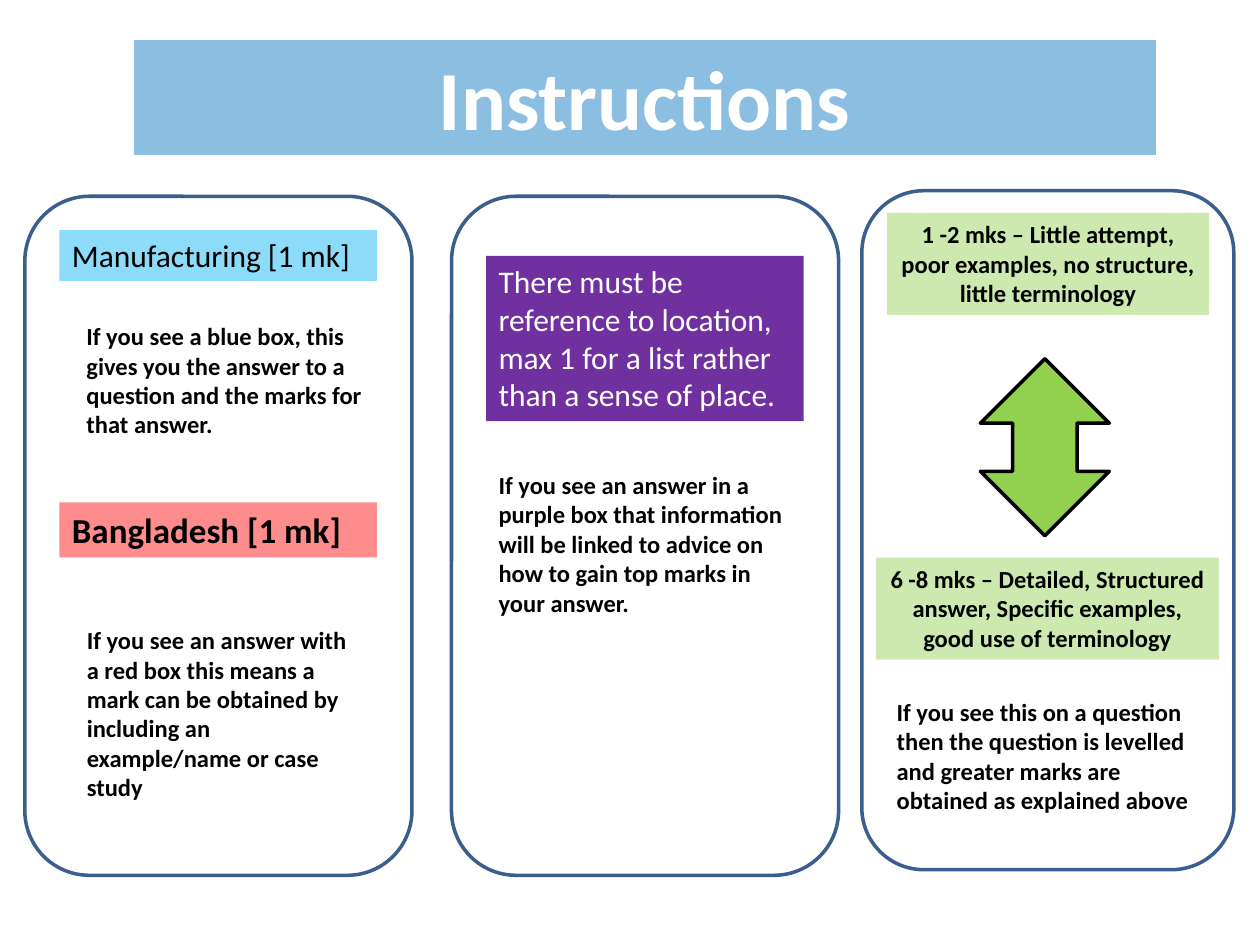
import pptx
import pptx.util
import pptx.dml.color
import pptx.enum.shapes
import pptx.enum.text
import pptx.oxml.ns
import lxml.etree

Pt = pptx.util.Pt
Shape = pptx.enum.shapes.MSO_SHAPE
Align = pptx.enum.text.PP_ALIGN

COLOURS = {
    "white": "FFFFFF",
    "black": "000000",
    "outline": "3A5F8C",
    "title": "0070C0",
    "answer": "00B0F0",
    "example": "FF0000",
    "advice": "7030A0",
    "level": "92D050",
}


class InstructionSlide:
    font = "Calibri"
    line_width = 2
    tint = 45

    def __init__(self, slide):
        self.slide = slide

    def colour(self, name):
        return pptx.dml.color.RGBColor.from_string(COLOURS[name])

    def shape(self, kind, place, fill, outline=None, opacity=100):
        shape = self.slide.shapes.add_shape(kind, *map(Pt, place))
        shape.shadow.inherit = False
        shape.fill.solid()
        shape.fill.fore_color.rgb = self.colour(fill)
        if opacity < 100:
            solid = shape.element.spPr.find(pptx.oxml.ns.qn("a:solidFill"))
            alpha = lxml.etree.SubElement(solid[0], pptx.oxml.ns.qn("a:alpha"))
            alpha.set("val", str(opacity * 1000))
        if outline:
            shape.line.color.rgb = self.colour(outline)
            shape.line.width = Pt(self.line_width)
        else:
            shape.line.fill.background()
        return shape

    def set_text(self, shape, text, size, bold, colour, align):
        frame = shape.text_frame
        frame.word_wrap = True
        frame.vertical_anchor = pptx.enum.text.MSO_ANCHOR.TOP
        paragraph = frame.paragraphs[0]
        paragraph.text = text
        paragraph.alignment = align
        paragraph.font.name = self.font
        paragraph.font.size = Pt(size)
        paragraph.font.bold = bold
        paragraph.font.color.rgb = self.colour(colour)

    def panel(self, place):
        self.shape(Shape.ROUNDED_RECTANGLE, place, "white", "outline")

    def arrow(self, place):
        self.shape(Shape.UP_DOWN_ARROW, place, "level", "black")

    def label(self, place, text, fill, size, bold=True, colour="black",
              align=Align.LEFT, opacity=tint):
        box = self.shape(Shape.RECTANGLE, place, fill, opacity=opacity)
        self.set_text(box, text, size, bold, colour, align)

    def note(self, place, text):
        box = self.slide.shapes.add_textbox(*map(Pt, place))
        self.set_text(box, text, 14, True, "black", Align.LEFT)


def main():
    deck = pptx.Presentation()
    deck.slide_width, deck.slide_height = Pt(720), Pt(540)
    page = InstructionSlide(deck.slides.add_slide(deck.slide_layouts[6]))

    page.label((76.5, 23, 584, 65.5), "Instructions", "title", 48,
               colour="white", align=Align.CENTER)

    # Blue and red boxes: answers and examples
    page.panel((14.2, 112.2, 221.2, 388))
    page.label((34, 131.5, 181.4, 29), "Manufacturing [1 mk]", "answer", 18, bold=False)
    page.note((42.3, 180, 181.4, 75),
              "If you see a blue box, this gives you the answer to a question "
              "and the marks for that answer.")
    page.label((34, 287, 181.4, 31.5), "Bangladesh [1 mk]", "example", 20)
    page.note((42.5, 353.7, 164.2, 109),
              "If you see an answer with a red box this means a mark can be "
              "obtained by including an example/name or case study")

    # Purple box: advice for top marks
    page.panel((258, 112.2, 221.2, 388))
    page.label((277.8, 146.2, 181.4, 94.5),
               "There must be reference to location, max 1 for a list rather "
               "than a sense of place.",
               "advice", 18, bold=False, colour="white", opacity=100)
    page.note((277.8, 265, 181.4, 92),
              "If you see an answer in a purple box that information will be "
              "linked to advice on how to gain top marks in your answer.")

    # Green boxes: levelled questions
    page.panel((492.5, 109, 212.6, 388))
    page.arrow((560.2, 205, 73.7, 101.2))
    levels = [
        ((506.8, 121.7, 184.2, 58.2),
         "1 -2 mks – Little attempt, poor examples, no structure, little terminology"),
        ((500.6, 318.7, 196, 58.2),
         "6 -8 mks – Detailed, Structured answer, Specific examples, "
         "good use of terminology"),
    ]
    for place, text in levels:
        page.label(place, text, "level", 14, align=Align.CENTER)
    page.note((505.3, 394.7, 188, 75),
              "If you see this on a question then the question is levelled and "
              "greater marks are obtained as explained above")

    deck.save("out.pptx")


if __name__ == "__main__":
    main()
